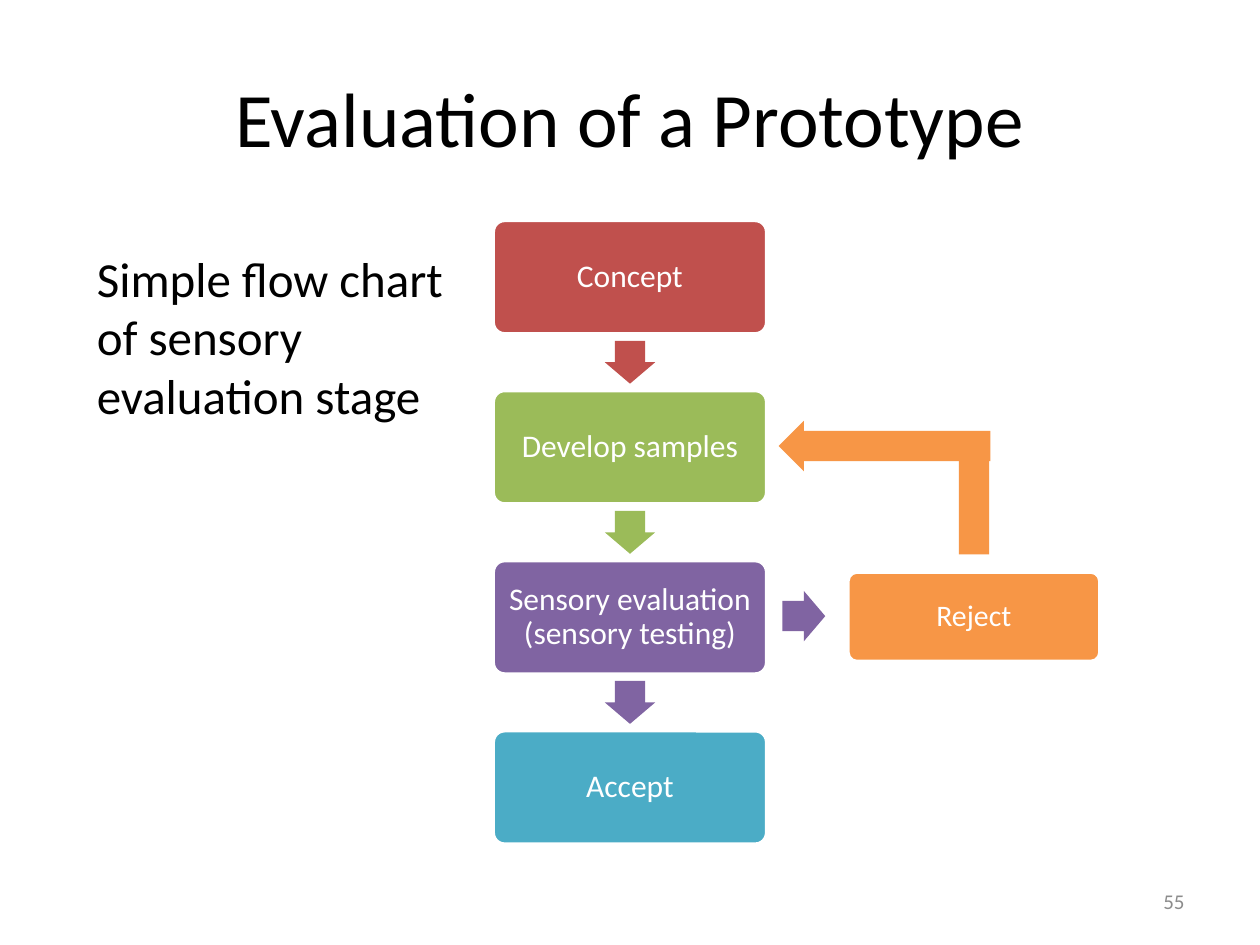
from pptx import Presentation
from pptx.dml.color import RGBColor
from pptx.enum.shapes import MSO_SHAPE
from pptx.enum.text import MSO_ANCHOR, PP_ALIGN
from pptx.util import Inches, Pt

FONT = "Calibri"
COLORS = {
    "black": "000000", "white": "FFFFFF", "gray": "8C8C8C",
    "red": "C0504D", "green": "9BBB59", "purple": "8064A2",
    "teal": "4BACC6", "orange": "F79646",
}
STEPS = [
    ("Concept", "red"),
    ("Develop samples", "green"),
    ("Sensory evaluation (sensory testing)", "purple"),
    ("Accept", "teal"),
]
MID, TOP, PITCH = 5, 1.75, 1.35
WIDE, HIGH = 2.17, 0.9
LONG, SPAN = 0.34, 0.4


def color(name):
    return RGBColor.from_string(COLORS[name])


def write(frame, lines, size, ink, align, anchor=MSO_ANCHOR.MIDDLE):
    frame.word_wrap = True
    frame.vertical_anchor = anchor
    para = frame.paragraphs[0]
    para.alignment = align
    for num, line in enumerate(lines):
        if num:
            para.add_line_break()
        run = para.add_run()
        run.text = line
        run.font.name = FONT
        run.font.size = Pt(size)
        run.font.color.rgb = color(ink)
    return para


def add_text(slide, box, lines, size, ink, align, anchor=MSO_ANCHOR.MIDDLE):
    area = slide.shapes.add_textbox(*map(Inches, box))
    return write(area.text_frame, lines, size, ink, align, anchor)


def add_form(slide, kind, box, fill):
    form = slide.shapes.add_shape(kind, *map(Inches, box))
    form.shadow.inherit = False
    form.fill.solid()
    form.fill.fore_color.rgb = color(fill)
    form.line.fill.background()
    return form


def add_card(slide, box, label, fill, size):
    card = add_form(slide, MSO_SHAPE.ROUNDED_RECTANGLE, box, fill)
    card.adjustments[0] = 0.1
    card.line.color.rgb = color("white")
    card.line.width = Pt(2)
    frame = card.text_frame
    frame.margin_left = frame.margin_right = Inches(0.1)
    frame.margin_top = frame.margin_bottom = Inches(0.1)
    para = write(frame, [label], size, "white", PP_ALIGN.CENTER)
    para.line_spacing = 0.9


def add_arrow(slide, mid, row, length, fill, turn=0):
    box = (mid - length / 2, row - SPAN / 2, length, SPAN)
    arrow = add_form(slide, MSO_SHAPE.RIGHT_ARROW, box, fill)
    arrow.adjustments[0] = 0.6
    arrow.adjustments[1] = 0.5
    arrow.rotation = turn


def add_flow(slide):
    for num, (label, fill) in enumerate(STEPS):
        top = TOP + num * PITCH
        add_card(slide, (MID - WIDE / 2, top, WIDE, HIGH), label, fill, 18)
        if num < len(STEPS) - 1:
            row = top + (HIGH + PITCH) / 2
            add_arrow(slide, MID, row, LONG, fill, 90)


def add_loop(slide):
    add_arrow(slide, 6.38, 4.89, LONG, "purple")
    add_card(slide, (6.73, 4.54, 2, 0.71), "Reject", "orange", 17)
    add_form(slide, MSO_SHAPE.RECTANGLE, (7.61, 3.44, 0.24, 0.96), "orange")
    add_arrow(slide, 7.02, 3.54, 1.68, "orange", 180)


def main():
    deck = Presentation()
    deck.slide_width, deck.slide_height = Inches(10), Inches(7.5)
    slide = deck.slides.add_slide(deck.slide_layouts[6])
    add_text(slide, (0.5, 0.3, 9, 1.25), ["Evaluation of a Prototype"],
             44, "black", PP_ALIGN.CENTER)
    body = add_text(slide, (0.67, 1.92, 3.2, 1.6),
                    ["Simple flow chart", "of sensory", "evaluation stage"],
                    28, "black", PP_ALIGN.LEFT, MSO_ANCHOR.TOP)
    body.space_before = Pt(5.6)
    add_flow(slide)
    add_loop(slide)
    add_text(slide, (7.17, 6.95, 2.33, 0.4), ["55"],
             12, "gray", PP_ALIGN.RIGHT)
    deck.save("out.pptx")


if __name__ == "__main__":
    main()
